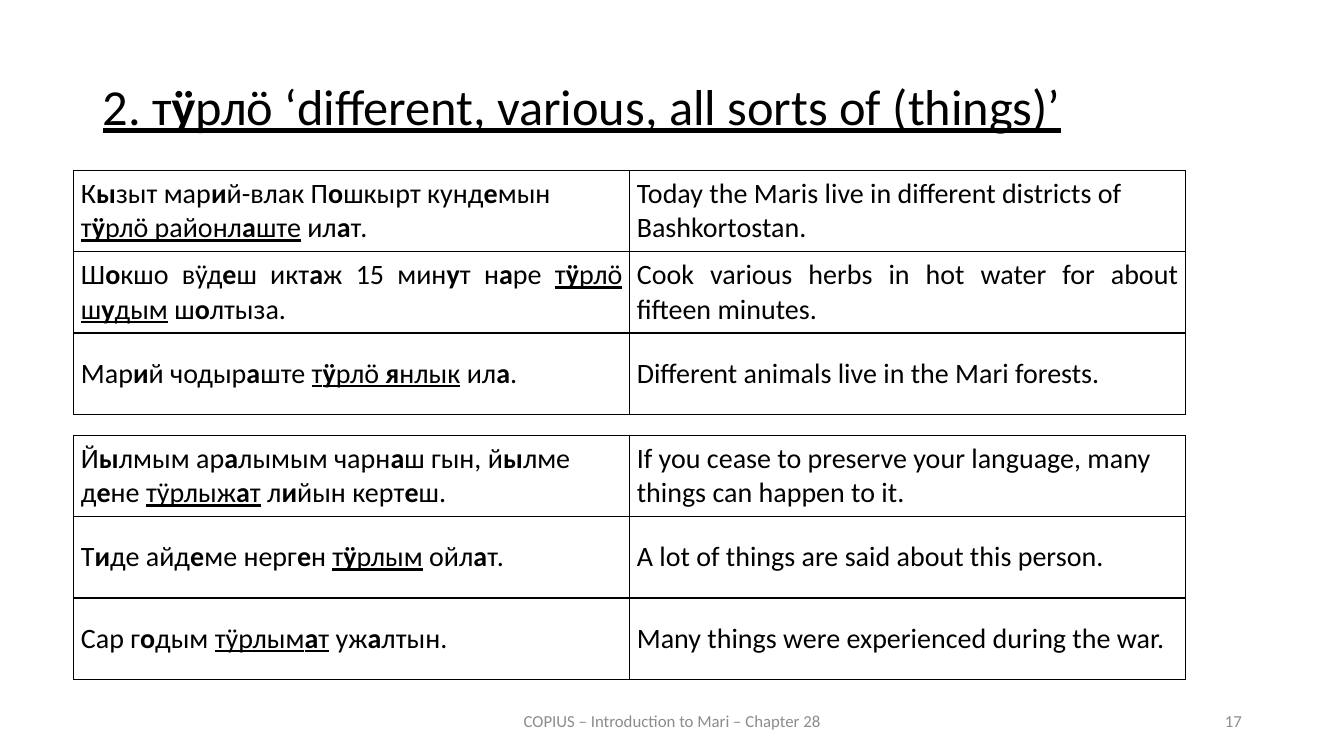
from itertools import product

from lxml.etree import SubElement
from pptx import Presentation
from pptx.dml.color import RGBColor
from pptx.enum.text import MSO_ANCHOR as Anchor, PP_ALIGN as Align
from pptx.oxml.ns import qn
from pptx.util import Pt

BLACK = RGBColor(0x00, 0x00, 0x00)
GREY = RGBColor(0x8C, 0x8C, 0x8C)
FONT = "Calibri"
LEFT, JUSTIFY = Align.LEFT, Align.JUSTIFY

# In the texts, * switches bold and _ switches underline.
HEADING = "_2. т*ӱ*рлӧ ‘different, various, all sorts of (things)’_"
FOOTER = "COPIUS – Introduction to Mari – Chapter 28"
PAGE = "17"

ADJECTIVE_EXAMPLES = [
    [("К*ы*зыт мар*и*й-влак П*о*шкырт кунд*е*мын _т*ӱ*рлӧ районл*а*ште_ ил*а*т.", LEFT),
     ("Today the Maris live in different districts of Bashkortostan.", LEFT)],
    [("Ш*о*кшо вӱд*е*ш икт*а*ж 15 мин*у*т н*а*ре _т*ӱ*рлӧ ш*у*дым_ ш*о*лтыза.", JUSTIFY),
     ("Cook various herbs in hot water for about fifteen minutes.", JUSTIFY)],
    [("Мар*и*й чодыр*а*ште _т*ӱ*рлӧ *я*нлык_ ил*а*.", JUSTIFY),
     ("Different animals live in the Mari forests.", JUSTIFY)],
]
NOUN_EXAMPLES = [
    [("Й*ы*лмым ар*а*лымым чарн*а*ш гын, й*ы*лме д*е*не _тӱрлыж*а*т_ л*и*йын керт*е*ш.", LEFT),
     ("If you cease to preserve your language, many things can happen to it.", LEFT)],
    [("Т*и*де айд*е*ме нерг*е*н _т*ӱ*рлым_ ойл*а*т.", LEFT),
     ("A lot of things are said about this person.", JUSTIFY)],
    [("Сар г*о*дым _тӱрлым*а*т_ уж*а*лтын.", LEFT),
     ("Many things were experienced during the war.", JUSTIFY)],
]

TABLE_LEFT, COLUMN_WIDTH, ROW_HEIGHT = 52.6, 397.1, 58.1
EXAMPLE_SETS = [(121.7, ADJECTIVE_EXAMPLES), (311, NOUN_EXAMPLES)]
CELL_FORMAT = {
    "vertical_anchor": Anchor.MIDDLE,
    "margin_left": Pt(5.2), "margin_right": Pt(5.2),
    "margin_top": 0, "margin_bottom": 0,
}


def write(paragraph, marked, size, color, align):
    paragraph.alignment = align
    for u, underlined in enumerate(marked.split("_")):
        for b, piece in enumerate(underlined.split("*")):
            if not piece:
                continue
            run = paragraph.add_run()
            run.text = piece
            looks = {"name": FONT, "size": Pt(size), "bold": b % 2 == 1,
                     "underline": u % 2 == 1}
            for key, value in looks.items():
                setattr(run.font, key, value)
            run.font.color.rgb = color


def add_line(slide, box, marked, size, color, align, anchor):
    frame = slide.shapes.add_textbox(*map(Pt, box)).text_frame
    frame.word_wrap = True
    frame.vertical_anchor = anchor
    write(frame.paragraphs[0], marked, size, color, align)
    return frame.paragraphs[0]


def add_borders(cell):
    properties = cell._tc.get_or_add_tcPr()
    for side in ("a:lnL", "a:lnR", "a:lnT", "a:lnB"):
        line = SubElement(properties, qn(side), w=str(Pt(1)))
        fill = SubElement(line, qn("a:solidFill"))
        SubElement(fill, qn("a:srgbClr"), val=str(BLACK))


def add_examples(slide, top, rows):
    columns = len(rows[0])
    table = slide.shapes.add_table(
        len(rows), columns, Pt(TABLE_LEFT), Pt(top),
        Pt(columns * COLUMN_WIDTH), Pt(len(rows) * ROW_HEIGHT)).table
    table.first_row = table.horz_banding = False
    for column in table.columns:
        column.width = Pt(COLUMN_WIDTH)
    for row in table.rows:
        row.height = Pt(ROW_HEIGHT)
    for r, c in product(range(len(rows)), range(columns)):
        cell = table.cell(r, c)
        for key, value in CELL_FORMAT.items():
            setattr(cell, key, value)
        add_borders(cell)
        cell.fill.background()
        sentence, align = rows[r][c]
        write(cell.text_frame.paragraphs[0], sentence, 20, BLACK, align)


def main():
    deck = Presentation()
    deck.slide_width, deck.slide_height = Pt(960), Pt(540)
    slide = deck.slides.add_slide(deck.slide_layouts[6])

    heading = add_line(slide, (66.2, 54.7, 828, 59.8), HEADING, 36, BLACK,
                       JUSTIFY, Anchor.TOP)
    heading.line_spacing = 0.9
    heading.space_before = Pt(12)
    add_line(slide, (318.2, 500.4, 324, 28.8), FOOTER, 12, GREY,
             Align.CENTER, Anchor.MIDDLE)
    add_line(slide, (678.2, 500.4, 216, 28.8), PAGE, 12, GREY,
             Align.RIGHT, Anchor.MIDDLE)
    for top, rows in EXAMPLE_SETS:
        add_examples(slide, top, rows)

    deck.save("out.pptx")


if __name__ == "__main__":
    main()
